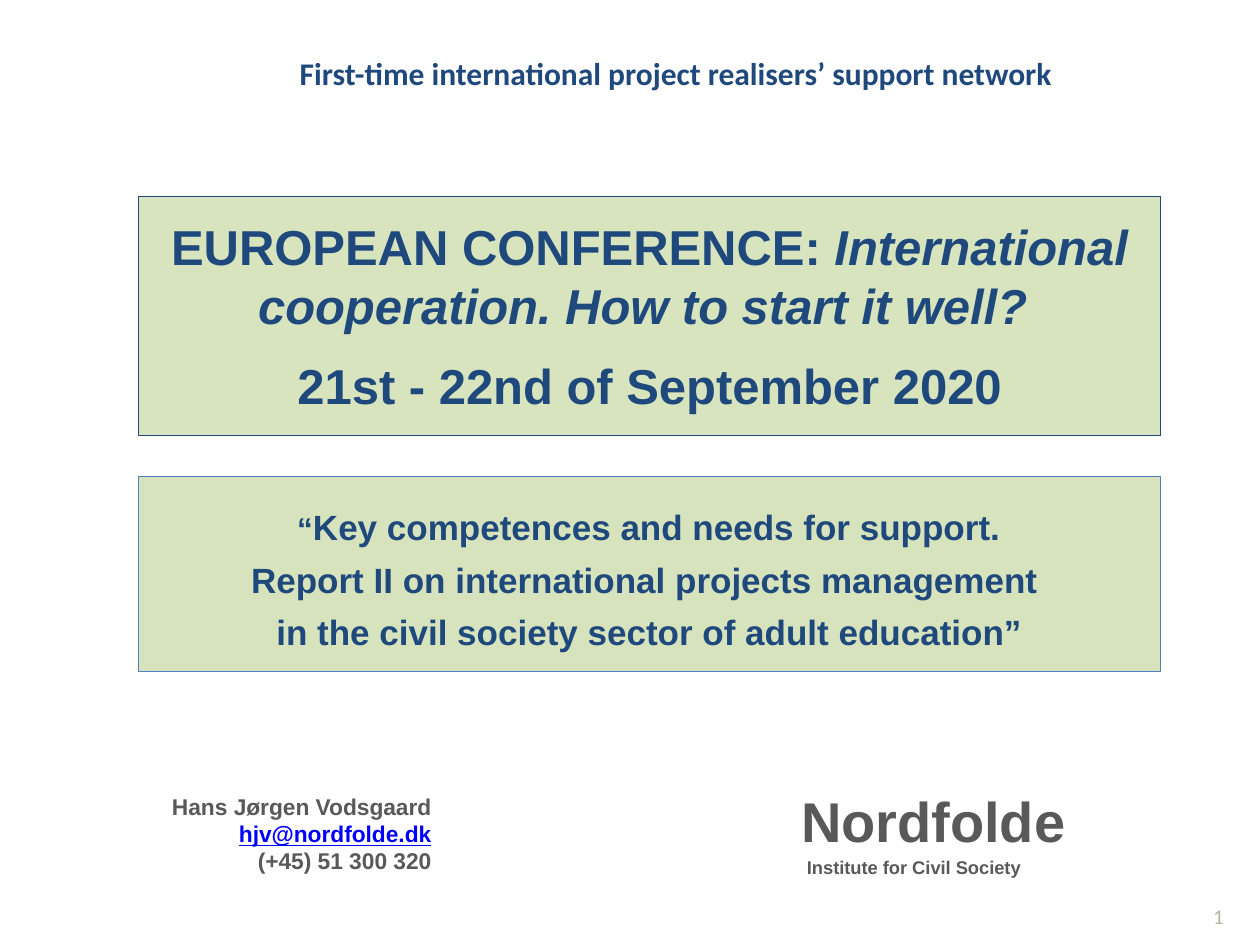
from dataclasses import dataclass, field
from typing import Optional

from pptx import Presentation
from pptx.dml.color import RGBColor
from pptx.enum.shapes import MSO_SHAPE
from pptx.enum.text import MSO_ANCHOR as Anchor, MSO_AUTO_SIZE as AutoSize, PP_ALIGN as Align
from pptx.util import Emu, Pt

PX = 9144
COLORS = {
    "navy": "1F497D",
    "blue": "4F81BD",
    "link": "0000FF",
    "gray": "595959",
    "sand": "B5B2A2",
    "lime": "D7E4BD",
    "moss": "D6E3BC",
}


@dataclass
class Span:
    text: str
    size: Optional[float] = None
    italic: Optional[bool] = None


@dataclass
class Line:
    spans: list[Span]
    size: float
    color: str = "navy"
    font: str = "Arial"
    bold: bool = True
    italic: bool = False
    underline: bool = False
    align: Align = Align.LEFT
    before: float = 0
    after: float = 0
    spacing: float = 1.0


@dataclass
class Block:
    left: int
    top: int
    width: int
    height: int
    lines: list[Line] = field(default_factory=list)
    fill: Optional[str] = None
    border: Optional[str] = None
    anchor: Anchor = Anchor.TOP
    inset_top: int = 5
    inset_bottom: int = 5
    grow: bool = True


def rgb(name: str) -> RGBColor:
    return RGBColor.from_string(COLORS[name])


def write_line(paragraph, line: Line) -> None:
    paragraph.alignment = line.align
    paragraph.space_before, paragraph.space_after = Pt(line.before), Pt(line.after)
    paragraph.line_spacing = line.spacing
    font = paragraph.font
    font.name, font.size, font.bold = line.font, Pt(line.size), line.bold
    font.italic, font.underline = line.italic, line.underline
    font.color.rgb = rgb(line.color)
    for span in line.spans:
        run = paragraph.add_run()
        run.text = span.text
        if span.size:
            run.font.size = Pt(span.size)
        if span.italic is not None:
            run.font.italic = span.italic


def draw_block(slide, block: Block) -> None:
    place = [Emu(n * PX) for n in (block.left, block.top, block.width, block.height)]
    if block.fill:
        shape = slide.shapes.add_shape(MSO_SHAPE.RECTANGLE, *place)
        shape.shadow.inherit = False
        shape.fill.solid()
        shape.fill.fore_color.rgb = rgb(block.fill)
        shape.line.color.rgb = rgb(block.border)
        shape.line.width = Pt(0.75)
    else:
        shape = slide.shapes.add_textbox(*place)
    frame = shape.text_frame
    frame.word_wrap = True
    frame.auto_size = AutoSize.SHAPE_TO_FIT_TEXT if block.grow else AutoSize.NONE
    frame.vertical_anchor = block.anchor
    frame.margin_top, frame.margin_bottom = Emu(block.inset_top * PX), Emu(block.inset_bottom * PX)
    for index, line in enumerate(block.lines):
        write_line(frame.add_paragraph() if index else frame.paragraphs[0], line)


def report_line(*spans: Span) -> Line:
    return Line(list(spans), 20, align=Align.CENTER, spacing=1.25)


def contact_line(text: str, color: str = "gray", underline: bool = False) -> Line:
    return Line([Span(text)], 13, color, underline=underline, align=Align.RIGHT)


institute = Block(626, 619, 283, 84, [
    Line([Span("Nordfolde")], 32, "gray"),
    Line([Span(" ", 12), Span("Institute for Civil Society")], 10.5, "gray"),
])
conference = Block(110, 156, 811, 190, [
    Line([Span("EUROPEAN CONFERENCE: "),
          Span("International cooperation. How to start it well? ", italic=True)],
         28, align=Align.CENTER, before=12),
    Line([Span("21st - 22nd of September 2020")], 28, align=Align.CENTER, before=12, after=12),
], "lime", "navy", inset_top=16, inset_bottom=16)
report = Block(110, 378, 811, 155, [
    report_line(Span(" “", 18), Span("Key competences and needs for support. ")),
    report_line(Span("Report II on international projects management ")),
    report_line(Span("in the civil society sector of adult education”")),
], "moss", "blue", Anchor.MIDDLE, 16, 16)
contact = Block(104, 617, 248, 84, [
    contact_line("Hans Jørgen Vodsgaard"),
    contact_line("hjv@nordfolde.dk", "link", True),
    contact_line("(+45) 51 300 320"),
], inset_top=12)
page_number = Block(942, 690, 50, 52, [
    Line([Span("1")], 12, "sand", "Calibri", bold=False, align=Align.CENTER),
], anchor=Anchor.BOTTOM, grow=False)
network = Block(228, 38, 702, 40, [
    Line([Span("First-time international project realisers’ support network")], 18, font="Calibri"),
])


def main() -> None:
    deck = Presentation()
    deck.slide_width, deck.slide_height = Emu(1000 * PX), Emu(750 * PX)
    slide = deck.slides.add_slide(deck.slide_layouts[6])
    for block in (institute, conference, report, contact, page_number, network):
        draw_block(slide, block)
    deck.save("out.pptx")


if __name__ == "__main__":
    main()
